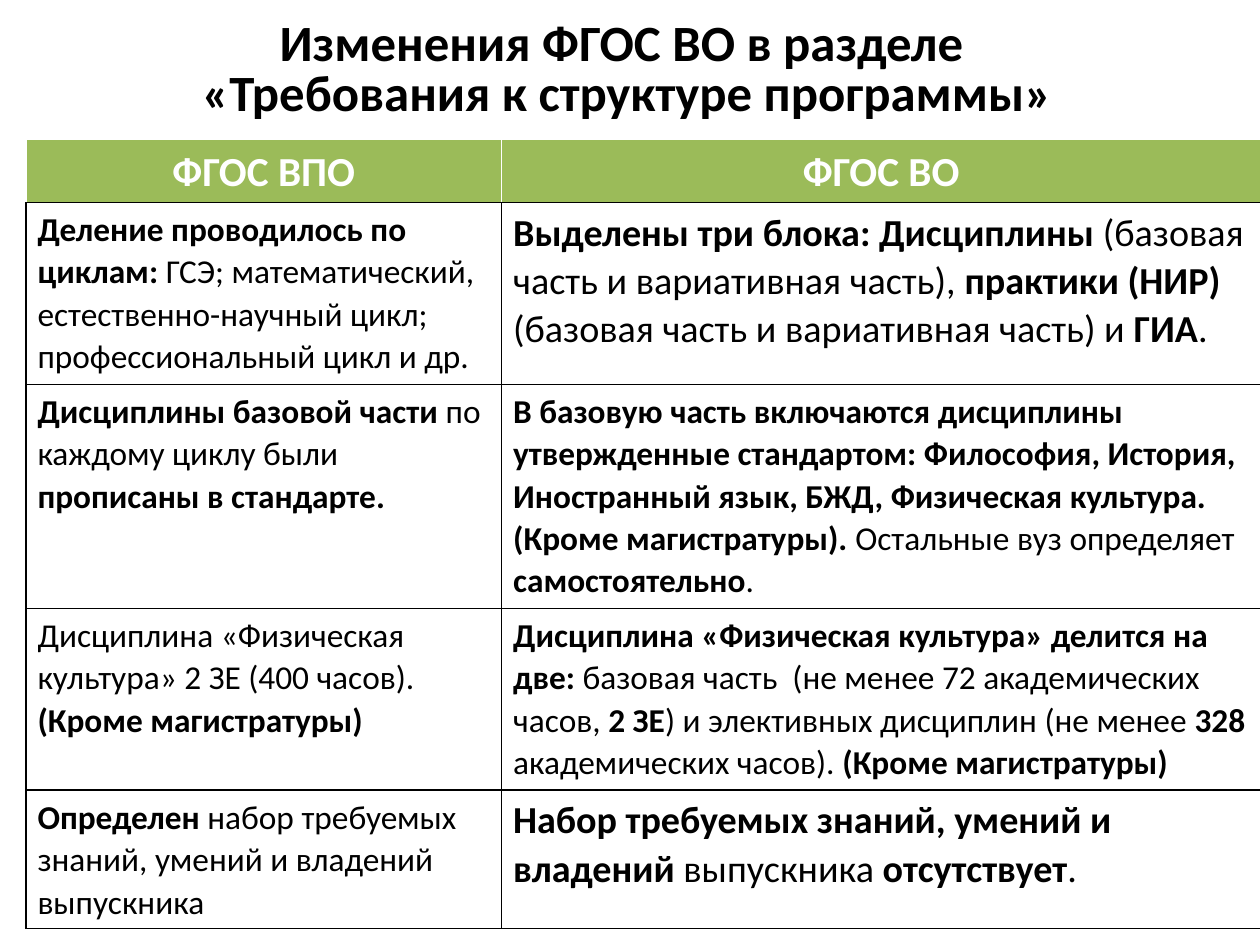
from dataclasses import dataclass

from lxml import etree
from pptx import Presentation
from pptx.dml.color import RGBColor
from pptx.enum.text import MSO_ANCHOR, PP_ALIGN
from pptx.oxml.ns import qn
from pptx.util import Cm, Pt

CENTER, LEFT = PP_ALIGN.CENTER, PP_ALIGN.LEFT
TOP, MIDDLE = MSO_ANCHOR.TOP, MSO_ANCHOR.MIDDLE
FONT = "Calibri"
BLACK, WHITE, GREEN = "000000", "FFFFFF", "9BBB59"
BOLD_MARK = "**"
TABLE_SPACING = 1.04
COLUMN_WIDTHS = (10.57, 16.87)
ROW_HEIGHTS = (1.4, 4.04, 4.98, 4.04, 3.07)


@dataclass(frozen=True)
class Entry:
    text: str
    size: float = 21


TITLE = "**Изменения ФГОС ВО в разделе\n «Требования к структуре программы»**"
HEADINGS = (Entry("**ФГОС ВПО**", 26), Entry("**ФГОС ВО**", 26))
COMPARISONS = (
    (
        Entry("**Деление проводилось по циклам: **ГСЭ; математический, "
              "естественно-научный цикл; профессиональный цикл и др."),
        Entry("**Выделены три блока: Дисциплины **(базовая часть и вариативная часть), "
              "**практики (НИР) **(базовая часть и вариативная часть) и **ГИА**.", 24),
    ),
    (
        Entry("**Дисциплины базовой части **по каждому циклу были "
              "**прописаны в стандарте.**"),
        Entry("**В базовую часть включаются дисциплины утвержденные стандартом: "
              "Философия, История, Иностранный язык, БЖД, Физическая культура. "
              "(Кроме магистратуры). **Остальные вуз определяет **самостоятельно**."),
    ),
    (
        Entry("Дисциплина «Физическая культура» 2 ЗЕ (400 часов). "
              "**(Кроме магистратуры)**"),
        Entry("**Дисциплина «Физическая культура» делится на две: **базовая часть  "
              "(не менее 72 академических часов, **2 ЗЕ**) и элективных дисциплин "
              "(не менее **328** академических часов).** (Кроме магистратуры)**"),
    ),
    (
        Entry("**Определен** набор требуемых знаний, умений и владений\nвыпускника"),
        Entry("**Набор требуемых знаний, умений и владений **выпускника "
              "**отсутствует**.", 24),
    ),
)


def rgb(color: str) -> RGBColor:
    return RGBColor.from_string(color)


def write_text(frame, text: str, *, size: float, color: str = BLACK,
               align=LEFT, spacing=TABLE_SPACING) -> None:
    para = frame.paragraphs[0]
    para.alignment = align
    para.line_spacing = spacing
    for index, part in enumerate(text.split(BOLD_MARK)):
        for line_index, line in enumerate(part.split("\n")):
            if line_index:
                para.add_line_break()
            if not line:
                continue
            span = para.add_run()
            span.text = line
            span.font.name = FONT
            span.font.size = Pt(size)
            span.font.bold = index % 2 == 1
            span.font.color.rgb = rgb(color)


def set_borders(cell, **sides: tuple[str, float]) -> None:
    properties = cell._tc.get_or_add_tcPr()
    for position, (side, (color, width)) in enumerate(sides.items()):
        line = etree.Element(qn(f"a:ln{side}"), w=str(Pt(width)))
        fill = etree.SubElement(line, qn("a:solidFill"))
        etree.SubElement(fill, qn("a:srgbClr"), val=color)
        properties.insert(position, line)


def add_title(page) -> None:
    box = page.shapes.add_textbox(Cm(1.22), Cm(0.33), Cm(25.2), Cm(2.16))
    frame = box.text_frame
    frame.word_wrap = True
    frame.vertical_anchor = TOP
    write_text(frame, TITLE, size=32, align=CENTER, spacing=Pt(32))


def fill_cell(cell, entry: Entry, is_heading: bool) -> None:
    cell.fill.solid()
    cell.fill.fore_color.rgb = rgb(GREEN if is_heading else WHITE)
    cell.vertical_anchor = MIDDLE if is_heading else TOP
    black_line = (BLACK, 1)
    edge = (WHITE, 0.91) if is_heading else black_line
    set_borders(cell, L=edge, R=edge, T=edge, B=black_line)
    write_text(cell.text_frame, entry.text, size=entry.size,
               color=WHITE if is_heading else BLACK,
               align=CENTER if is_heading else LEFT)


def add_comparison_table(page) -> None:
    entries = (HEADINGS, *COMPARISONS)
    table = page.shapes.add_table(
        len(ROW_HEIGHTS), len(COLUMN_WIDTHS), Cm(0.58), Cm(3.1),
        Cm(sum(COLUMN_WIDTHS)), Cm(sum(ROW_HEIGHTS))).table
    table.horz_banding = False
    for column, width in zip(table.columns, COLUMN_WIDTHS):
        column.width = Cm(width)
    for row_index, (row, height) in enumerate(zip(table.rows, ROW_HEIGHTS)):
        row.height = Cm(height)
        for cell, entry in zip(row.cells, entries[row_index]):
            fill_cell(cell, entry, row_index == 0)


def main() -> None:
    deck = Presentation()
    deck.slide_width, deck.slide_height = Cm(28), Cm(21)
    page = deck.slides.add_slide(deck.slide_layouts[6])
    add_title(page)
    add_comparison_table(page)
    deck.save("out.pptx")


if __name__ == "__main__":
    main()
